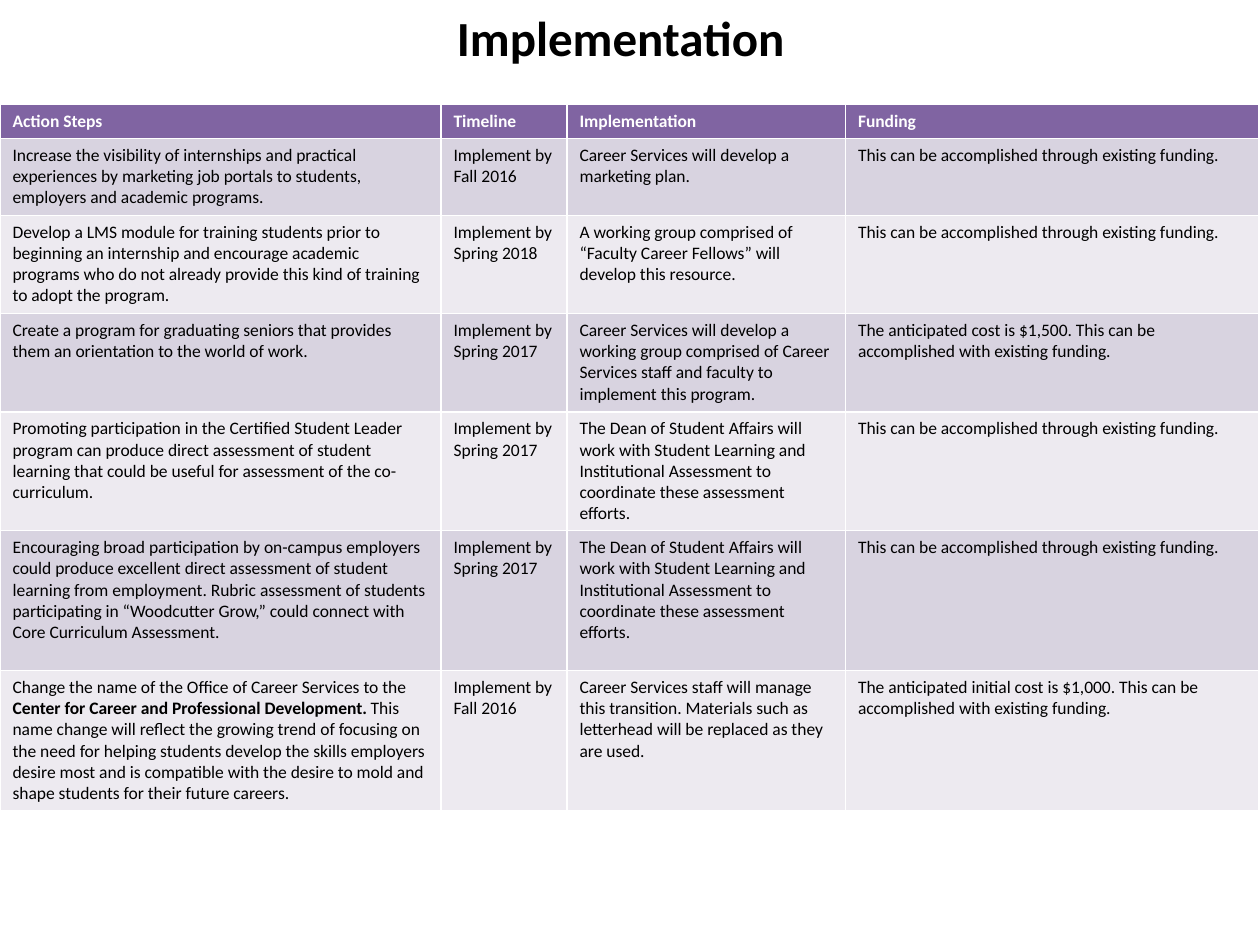
from pptx import Presentation
from pptx.dml.color import RGBColor
from pptx.enum.text import PP_ALIGN
from pptx.util import Inches, Pt

CENTER, LEFT = PP_ALIGN.CENTER, PP_ALIGN.LEFT
BLACK = RGBColor(0x00, 0x00, 0x00)
WHITE = RGBColor(0xFF, 0xFF, 0xFF)
PURPLE = RGBColor(0x80, 0x64, 0xA2)
BANDS = (RGBColor(0xD8, 0xD3, 0xE0), RGBColor(0xED, 0xEA, 0xF0))
FONT = "Calibri"

WIDTH, HEIGHT = 10, 7.5
TABLE_TOP = 0.83
COLUMN_WIDTHS = (3.5, 1, 2.21, 3.28)
ROW_HEIGHTS = (0.27, 0.61, 0.78, 0.78, 0.94, 1.11, 1.11)

TITLE = "Implementation "
HEADINGS = ("Action Steps", "Timeline", "Implementation", "Funding")
EXISTING = "This can be accomplished through existing funding."
DEAN = ("The Dean of Student Affairs will work with Student Learning and "
        "Institutional Assessment to coordinate these assessment efforts.")
NEW_NAME = "Center for Career and Professional Development. "
STEPS = [
    ("Increase the visibility of internships and practical experiences by marketing "
     "job portals to students, employers and academic programs.",
     "Implement by Fall 2016",
     "Career Services will develop a marketing plan.",
     EXISTING),
    ("Develop a LMS module for training students prior to beginning an internship and "
     "encourage academic programs who do not already provide this kind of training to "
     "adopt the program.",
     "Implement by Spring 2018",
     "A working group comprised of “Faculty Career Fellows” will develop this resource.",
     EXISTING),
    ("Create a program for graduating seniors that provides them an orientation to the "
     "world of work.",
     "Implement by Spring 2017",
     "Career Services will develop a working group comprised of Career Services staff "
     "and faculty to implement this program.",
     "The anticipated cost is $1,500. This can be accomplished with existing funding."),
    ("Promoting participation in the Certified Student Leader program can produce direct "
     "assessment of student learning that could be useful for assessment of the "
     "co-curriculum.",
     "Implement by Spring 2017", DEAN, EXISTING),
    ("Encouraging broad participation by on-campus employers could produce excellent "
     "direct assessment of student learning from employment. Rubric assessment of "
     "students participating in “Woodcutter Grow,” could connect with Core Curriculum "
     "Assessment.",
     "Implement by Spring 2017", DEAN, EXISTING),
    ("Change the name of the Office of Career Services to the " + NEW_NAME +
     "This name change will reflect the growing trend of focusing on the need for "
     "helping students develop the skills employers desire most and is compatible with "
     "the desire to mold and shape students for their future careers.",
     "Implement by Fall 2016",
     "Career Services staff will manage this transition. Materials such as letterhead "
     "will be replaced as they are used.",
     "The anticipated initial cost is $1,000. This can be accomplished with existing "
     "funding."),
]


def write_text(frame, text, size=10, color=BLACK, bold=False, align=LEFT, emphasis=None):
    frame.word_wrap = True
    paragraph = frame.paragraphs[0]
    paragraph.alignment = align
    parts = [(text, bold)]
    if emphasis and emphasis in text:
        before, match, after = text.partition(emphasis)
        parts = [(before, bold), (match, True), (after, bold)]
    for part, heavy in parts:
        run = paragraph.add_run()
        run.text = part
        run.font.name = FONT
        run.font.size = Pt(size)
        run.font.bold = heavy
        run.font.color.rgb = color


def add_plan(slide):
    rows = [HEADINGS] + STEPS
    table = slide.shapes.add_table(
        len(rows), len(HEADINGS), 0, Inches(TABLE_TOP),
        Inches(sum(COLUMN_WIDTHS)), Inches(sum(ROW_HEIGHTS))).table
    for column, width in zip(table.columns, COLUMN_WIDTHS):
        column.width = Inches(width)
    for row, height in zip(table.rows, ROW_HEIGHTS):
        row.height = Inches(height)
    for row_index, texts in enumerate(rows):
        heading = row_index == 0
        for column_index, text in enumerate(texts):
            cell = table.cell(row_index, column_index)
            cell.fill.solid()
            cell.fill.fore_color.rgb = PURPLE if heading else BANDS[(row_index - 1) % 2]
            write_text(cell.text_frame, text, color=WHITE if heading else BLACK,
                       bold=heading, emphasis=NEW_NAME)


def main():
    presentation = Presentation()
    presentation.slide_width = Inches(WIDTH)
    presentation.slide_height = Inches(HEIGHT)
    slide = presentation.slides.add_slide(presentation.slide_layouts[6])
    add_plan(slide)
    title = slide.shapes.add_textbox(Inches(-0.03), Inches(0.01), Inches(WIDTH), Inches(0.57))
    write_text(title.text_frame, TITLE, size=28, bold=True, align=CENTER)
    presentation.save("out.pptx")


if __name__ == "__main__":
    main()
